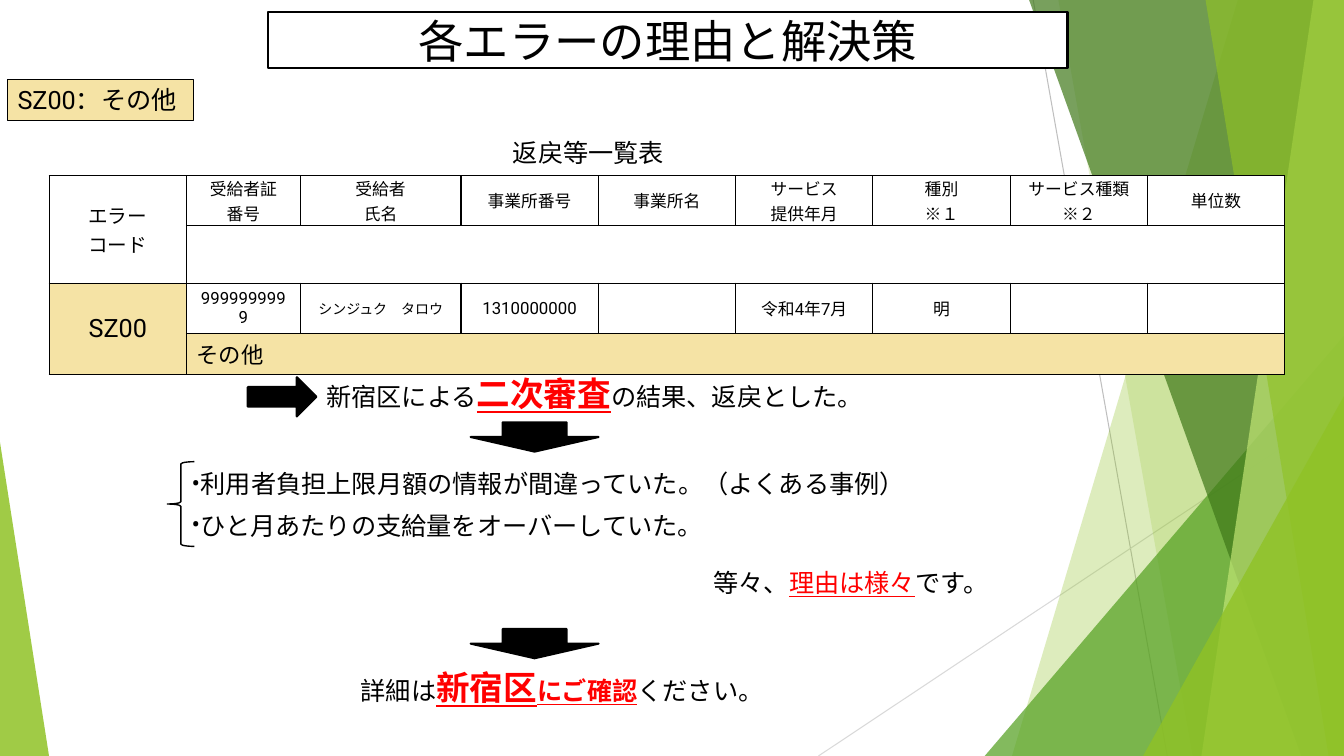
from dataclasses import dataclass
from typing import Any

from lxml.etree import SubElement
from pptx import Presentation
from pptx.dml.color import RGBColor
from pptx.enum.shapes import MSO_CONNECTOR as Connector, MSO_SHAPE as Preset
from pptx.enum.text import MSO_ANCHOR as Anchor, MSO_AUTO_SIZE as AutoSize, PP_ALIGN as Align
from pptx.oxml.ns import qn
from pptx.util import Pt


@dataclass(frozen=True)
class Theme:
    font: str = "Roboto"
    black: str = "000000"
    white: str = "FFFFFF"
    red: str = "FF0000"
    sand: str = "F5E3A5"
    green: str = "90C226"
    mid_green: str = "54A021"
    dark_green: str = "3F7819"
    pale_green: str = "C0E474"
    ray: str = "BFBFBF"
    pale_ray: str = "D9D9D9"
    title: float = 32.4
    strong: float = 24
    body: float = 18
    note: float = 16
    row_head: float = 14
    cell: float = 12
    small: float = 10


THEME = Theme()


@dataclass(frozen=True)
class Box:
    left: float
    top: float
    width: float
    height: float

    def lengths(self) -> tuple:
        return Pt(self.left), Pt(self.top), Pt(self.width), Pt(self.height)


@dataclass(frozen=True)
class Run:
    text: str
    size: float = THEME.body
    color: str = THEME.black
    bold: bool = False
    underline: bool = False


@dataclass(frozen=True)
class Band:
    """A strip from the top edge to the bottom edge, reaching the right edge."""
    top_x: float
    bottom_x: float
    color: str
    opacity: int


@dataclass(frozen=True)
class Triangle:
    box: Box
    apex: float
    color: str
    opacity: int


@dataclass(frozen=True)
class Cell:
    row: int
    column: int
    lines: tuple = ()
    size: float = THEME.cell
    fill: str = THEME.white
    row_span: int = 1
    column_span: int = 1
    align: Any = Align.CENTER


WIDTH, HEIGHT = 960, 540
RAYS = [((738, 0), (833.8, HEIGHT), THEME.ray), ((WIDTH, 290.2), (584.6, HEIGHT), THEME.pale_ray)]
DECOR = [
    Band(884.2, 722.9, THEME.green, 30),
    Band(756, 851.8, THEME.green, 20),
    Triangle(Box(703.4, 239.8, 256.6, 300.2), 1, THEME.mid_green, 72),
    Band(735.1, 929.5, THEME.dark_green, 70),
    Band(938.2, 858.2, THEME.pale_green, 70),
    Band(861.1, 949, THEME.green, 65),
    Triangle(Box(816.5, 283, 143.5, 257), 1, THEME.green, 80),
    Triangle(Box(0, 316, 35, 224), 0, THEME.green, 85),
]
ARROWS = [
    (Preset.RIGHT_ARROW, Box(177, 269.5, 49, 28)),
    (Preset.DOWN_ARROW, Box(336.2, 301.7, 91.4, 20.9)),
    (Preset.DOWN_ARROW, Box(336.2, 449.3, 91.4, 20.9)),
]
TEXTS = [
    (Box(359.3, 94.3, 123.8, 29), [Run("返戻等一覧表")]),
    (Box(226, 263, 402.5, 36), [
        Run("新宿区による"),
        Run("二次審査", THEME.strong, THEME.red, True, True),
        Run("の結果、返戻とした。")]),
    (Box(502.6, 401.8, 214.6, 29), [
        Run("等々、"), Run("理由は様々", color=THEME.red, underline=True), Run("です。")]),
    (Box(250.6, 473, 305.3, 36), [
        Run("詳細は"),
        Run("新宿区", THEME.strong, THEME.red, True, True),
        Run("にご確認", THEME.body, THEME.red, True, True),
        Run("ください。")]),
]
REASONS = ["利用者負担上限月額の情報が間違っていた。（よくある事例）", "ひと月あたりの支給量をオーバーしていた。"]
COLUMNS = [98.1, 81.4, 114.7] + [98.1] * 6
ROWS = [35.5, 41.3, 35.7, 29.3]
HEADINGS = [("受給者証", "番号"), ("受給者", "氏名"), ("事業所番号",), ("事業所名",),
            ("サービス", "提供年月"), ("種別", "※１"), ("サービス種類", "※２"), ("単位数",)]
RECORD = ["9999999999", "シンジュク　タロウ", "1310000000", "", "令和4年7月", "明", "", ""]
CELLS = [
    Cell(0, 0, ("エラー", "コード"), THEME.row_head, row_span=2),
    *(Cell(0, column, lines) for column, lines in enumerate(HEADINGS, 1)),
    Cell(1, 1, column_span=8),
    Cell(2, 0, ("SZ00",), THEME.body, THEME.sand, row_span=2),
    *(Cell(2, column, (text,) if text else (), THEME.small if column == 2 else THEME.cell)
      for column, text in enumerate(RECORD, 1)),
    Cell(3, 1, ("その他",), THEME.note, THEME.sand, column_span=8, align=Align.LEFT),
]


def place(shape: Any, box: Box) -> None:
    for name, value in zip(("left", "top", "width", "height"), box.lengths()):
        setattr(shape, name, value)


def write(paragraph: Any, runs: list, align: Any = Align.LEFT) -> None:
    paragraph.alignment = align
    for item in runs:
        run = paragraph.add_run()
        run.text = item.text
        formats = {"name": THEME.font, "size": Pt(item.size), "bold": item.bold, "underline": item.underline}
        for name, value in formats.items():
            setattr(run.font, name, value)
        run.font.color.rgb = RGBColor.from_string(item.color)


def paint(shape: Any, color: str, opacity: int = 100) -> None:
    shape.fill.solid()
    shape.fill.fore_color.rgb = RGBColor.from_string(color)
    if opacity < 100:
        tint = shape._element.spPr.find(qn("a:solidFill"))[0]
        SubElement(tint, qn("a:alpha"), val=str(opacity * 1000))


def outline(shape: Any, width: float, color: str = THEME.black) -> None:
    shape.line.width = Pt(width)
    shape.line.color.rgb = RGBColor.from_string(color)


def set_frame(shape: Any, anchor: Any = Anchor.TOP) -> Any:
    frame = shape.text_frame
    for name, value in {"word_wrap": True, "auto_size": AutoSize.NONE, "vertical_anchor": anchor}.items():
        setattr(frame, name, value)
    return frame


def add_preset(slide: Any, preset: Any, box: Box) -> Any:
    shape = slide.shapes.add_shape(preset, *box.lengths())
    shape.shadow.inherit = False
    return shape


def add_decor(slide: Any) -> None:
    for start, end, color in RAYS:
        ray = slide.shapes.add_connector(Connector.STRAIGHT, *map(Pt, start + end))
        outline(ray, 0.75, color)
        SubElement(ray._element.spPr, qn("a:effectLst"))
    for item in DECOR:
        if isinstance(item, Band):
            builder = slide.shapes.build_freeform(Pt(item.top_x), 0)
            corners = [(WIDTH, 0), (WIDTH, HEIGHT), (item.bottom_x, HEIGHT)]
            builder.add_line_segments([(Pt(x), Pt(y)) for x, y in corners])
            shape = builder.convert_to_shape()
            shape.shadow.inherit = False
        else:
            shape = add_preset(slide, Preset.ISOSCELES_TRIANGLE, item.box)
            shape.adjustments[0] = item.apex
        paint(shape, item.color, item.opacity)
        shape.line.fill.background()


def fill_placeholders(slide: Any) -> None:
    title, reasons = slide.shapes.title, slide.placeholders[1]
    for shape in (title, reasons):
        shape._element.getparent().append(shape._element)  # in front of the decor
    place(title, Box(191.5, 8.6, 571, 40.3))
    paint(title, THEME.white)
    outline(title, 1.5)
    write(set_frame(title, Anchor.MIDDLE).paragraphs[0], [Run("各エラーの理由と解決策", THEME.title)], Align.CENTER)

    place(reasons, Box(129.6, 331, 640, 66))
    frame = set_frame(reasons)
    for index, reason in enumerate(REASONS):
        paragraph = frame.add_paragraph() if index else frame.paragraphs[0]
        write(paragraph, [Run(reason)])
        paragraph.space_before = Pt(8 * index)
        properties = paragraph._element.get_or_add_pPr()
        properties.set("marL", str(Pt(6.5)))
        properties.set("indent", str(-Pt(6.5)))
        SubElement(properties, qn("a:buFont"), typeface=THEME.font)
        SubElement(properties, qn("a:buChar"), char="•")


def add_error_table(slide: Any) -> None:
    box = Box(35.1, 125.6, sum(COLUMNS), sum(ROWS))
    table = slide.shapes.add_table(len(ROWS), len(COLUMNS), *box.lengths()).table
    table.first_row = table.horz_banding = False
    for column, width in zip(table.columns, COLUMNS):
        column.width = Pt(width)
    for row, height in zip(table.rows, ROWS):
        row.height = Pt(height)
    for cell in table.iter_cells():
        cell.margin_top = cell.margin_bottom = Pt(0)
        properties = cell._tc.get_or_add_tcPr()
        for side in ("lnL", "lnR", "lnT", "lnB"):
            border = SubElement(properties, qn(f"a:{side}"), w=str(Pt(1)))
            SubElement(SubElement(border, qn("a:solidFill")), qn("a:srgbClr"), val=THEME.black)
    for item in CELLS:
        cell = table.cell(item.row, item.column)
        if item.row_span * item.column_span > 1:
            cell.merge(table.cell(item.row + item.row_span - 1, item.column + item.column_span - 1))
        paint(cell, item.fill)
        cell.vertical_anchor = Anchor.MIDDLE
        for index, line in enumerate(item.lines):
            paragraph = cell.text_frame.add_paragraph() if index else cell.text_frame.paragraphs[0]
            write(paragraph, [Run(line, item.size)], item.align)


def main() -> None:
    presentation = Presentation()
    presentation.slide_width, presentation.slide_height = Pt(WIDTH), Pt(HEIGHT)
    slide = presentation.slides.add_slide(presentation.slide_layouts[1])
    add_decor(slide)
    fill_placeholders(slide)
    label = add_preset(slide, Preset.RECTANGLE, Box(5.4, 57, 132.8, 29))
    paint(label, THEME.sand)
    outline(label, 0.75)
    write(set_frame(label).paragraphs[0], [Run("SZ00：その他")])
    add_error_table(slide)
    for box, runs in TEXTS:
        write(set_frame(slide.shapes.add_textbox(*box.lengths())).paragraphs[0], runs)
    for preset, box in ARROWS:
        arrow = add_preset(slide, preset, box)
        paint(arrow, THEME.black)
        outline(arrow, 1.5)
    brace = add_preset(slide, Preset.LEFT_BRACE, Box(119.5, 329.8, 19.4, 60.5))
    brace.fill.background()
    outline(brace, 1)
    presentation.save("out.pptx")


if __name__ == "__main__":
    main()
